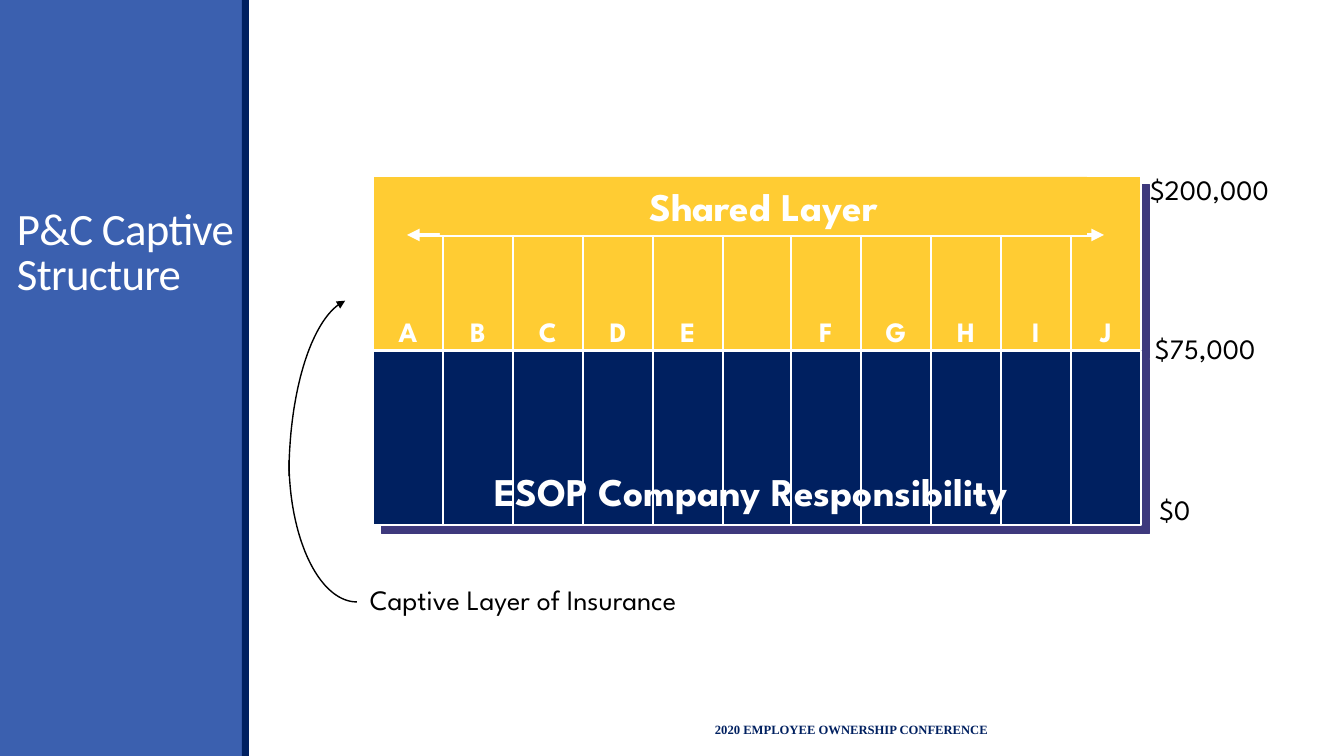
from math import cos, radians, sin

from lxml.etree import SubElement
from pptx import Presentation
from pptx.dml.color import RGBColor
from pptx.enum.shapes import MSO_CONNECTOR as Line, MSO_SHAPE as Shape
from pptx.enum.text import MSO_ANCHOR as Anchor, PP_ALIGN as Align
from pptx.oxml.ns import qn
from pptx.util import Pt

PX = 914400 / 100.8
BLUE = RGBColor(0x3B, 0x60, 0xAF)
NAVY = RGBColor(0x00, 0x20, 0x60)
YELLOW = RGBColor(0xFF, 0xCC, 0x33)
WHITE = RGBColor(0xFF, 0xFF, 0xFF)
BLACK = RGBColor(0x00, 0x00, 0x00)
SHADOW = "3E397D"

LABEL = dict(name="League Spartan", size=Pt(20), bold=False)
LETTER = dict(name="League Spartan", size=Pt(20), bold=True)
LAYER = dict(name="League Spartan", size=Pt(28), bold=True)
FOOTER = dict(name="Times New Roman", size=Pt(9), bold=True)
TITLE = dict(name="Calibri", size=Pt(32), bold=False)


def px(*lengths):
    return [round(length * PX) for length in lengths]


def write(holder, text, style, color, align=Align.CENTER, anchor=Anchor.TOP, indent=10):
    frame = holder.text_frame
    frame.word_wrap = True
    frame.vertical_anchor = anchor
    frame.margin_left, frame.margin_right = px(indent, 10)
    frame.margin_top = frame.margin_bottom = px(5)[0]
    paragraph = frame.paragraphs[0]
    paragraph.alignment = align
    run = paragraph.add_run()
    run.text = text
    for key, value in style.items():
        setattr(run.font, key, value)
    run.font.color.rgb = color


deck = Presentation()
deck.slide_width, deck.slide_height = px(1344, 756)
slide = deck.slides.add_slide(deck.slide_layouts[5])
shapes = slide.shapes

# Sidebar
for left, width, color in [(0, 249, BLUE), (242, 7, NAVY)]:
    bar = shapes.add_shape(Shape.RECTANGLE, *px(left, 0, width, 756))
    bar.shadow.inherit = False
    bar.fill.solid()
    bar.fill.fore_color.rgb = color
    bar.line.fill.background()

# Title, brought in front of the sidebar
title = shapes.title
title.left, title.top, title.width, title.height = px(7, 53, 242, 252)
write(title, "P&C Captive Structure", TITLE, WHITE, Align.LEFT, Anchor.BOTTOM)
title_line = title.text_frame.paragraphs[0]
title_line.line_spacing = 0.85
title_line.runs[0].font._element.set("spc", "-50")
shapes._spTree.append(title.element)

# Footer
footer = shapes.add_textbox(*px(602, 709, 512, 40))
write(footer, "2020 EMPLOYEE OWNERSHIP CONFERENCE", FOOTER, NAVY,
      Align.LEFT, Anchor.MIDDLE, indent=113)

# Company columns: shared layer above, own responsibility below
column_lefts = [373 + 70 * i - (2 if i > 5 else 0) for i in range(11)]
for left in column_lefts:
    for top, color in [(176, YELLOW), (351, NAVY)]:
        cell = shapes.add_shape(Shape.RECTANGLE, *px(left, top, 70, 174))
        cell.fill.solid()
        cell.fill.fore_color.rgb = color
        cell.line.color.rgb = WHITE
        cell.line.width = Pt(1)
        cell.shadow.inherit = False
        effects = cell.element.spPr.find(qn("a:effectLst"))
        shadow = SubElement(effects, qn("a:outerShdw"), dist=str(Pt(8.5)),
                            dir="2700000", algn="ctr", rotWithShape="0")
        SubElement(shadow, qn("a:srgbClr"), val=SHADOW)

# Company letters, with the middle column unnamed
for left, letter in zip(column_lefts, "ABCDE FGHIJ"):
    if letter != " ":
        write(shapes.add_textbox(*px(left + 9, 310, 52, 40)), letter, LETTER, WHITE)

# Span arrow, half covered by the shared layer caption
span = shapes.add_connector(Line.STRAIGHT, *px(407, 235, 1104, 235))
span.line.color.rgb = WHITE
span.line.width = Pt(3)
SubElement(span.element.spPr, qn("a:effectLst"))
for end in ("a:headEnd", "a:tailEnd"):
    SubElement(span.element.spPr.find(qn("a:ln")), qn(end), type="triangle")

# Layer captions
write(shapes.add_textbox(*px(440, 462, 622, 57)),
      "ESOP Company Responsibility", LAYER, WHITE)
shared = shapes.add_shape(Shape.RECTANGLE, *px(440, 177, 647, 58))
shared.shadow.inherit = False
shared.fill.solid()
shared.fill.fore_color.rgb = YELLOW
shared.line.fill.background()
write(shared, "Shared Layer", LAYER, WHITE)

# Black labels: amounts and the captive layer
for text, box, align, indent in [
    ("$0", (1146, 487, 58, 44), Align.CENTER, 10),
    ("$200,000", (1138, 167, 143, 44), Align.CENTER, 10),
    ("$75,000", (1145, 326, 161, 44), Align.LEFT, 10),
    ("Captive Layer of Insurance", (340, 578, 857, 43), Align.LEFT, 30),
]:
    write(shapes.add_textbox(*px(*box)), text, LABEL, BLACK, align, indent=indent)

# Curved arrow from the captive label up to the shared layer
for center_y, radius_y, start, stop in [(460, 142, 90, 180), (476, 178, 180, 260)]:
    points = [px(357 + 68 * cos(radians(angle)), center_y + radius_y * sin(radians(angle)))
              for angle in range(start, stop + 1, 2)]
    outline = shapes.build_freeform(*points[0])
    outline.add_line_segments(points[1:], close=False)
    curve = outline.convert_to_shape()
    curve.shadow.inherit = False
    curve.fill.background()
    curve.line.color.rgb = BLACK
    curve.line.width = Pt(1)
SubElement(curve.element.spPr.find(qn("a:ln")), qn("a:tailEnd"), type="triangle")

deck.save("out.pptx")
